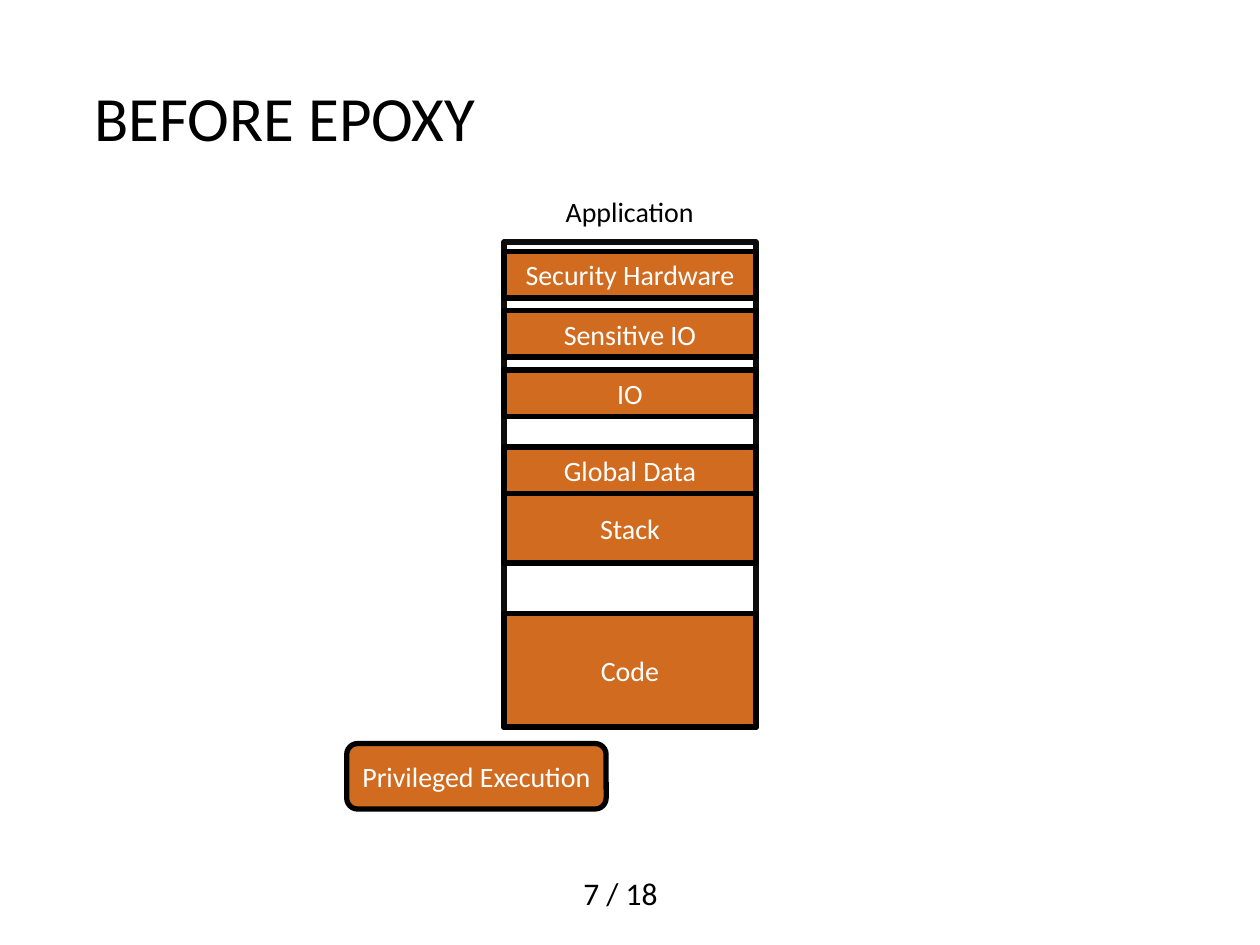
"""Builds the slide that shows an application's memory before EPOXY."""
from pptx import Presentation
from pptx import util as u
from pptx.dml.color import RGBColor
from pptx.enum import shapes, text

COLOURS = {"ink": "000000", "frame": "0D0D0D", "region": "D06B20", "light": "FFFFFF"}
MEMORY_LEFT, MEMORY_WIDTH = 10.16, 5.08
REGIONS = [
    ("Security Hardware", 5.07, 0.94),
    ("Sensitive IO", 6.26, 0.94),
    ("IO", 7.46, 0.94),
    ("Global Data", 9.01, 0.94),
    ("Stack", 9.95, 1.4),
    ("Code", 12.37, 2.29),
]


def colour(name):
    return RGBColor.from_string(COLOURS[name])


def write(holder, wording, size, ink, align, **frame_format):
    frame = holder.text_frame
    for name, value in frame_format.items():
        setattr(frame, name, value)
    paragraph = frame.paragraphs[0]
    paragraph.alignment = align
    run = paragraph.add_run()
    run.text = wording
    for name, value in {"name": "Calibri", "size": u.Pt(size)}.items():
        setattr(run.font, name, value)
    run.font.color.rgb = colour(ink)


def add_label(slide, wording, place, size, align=text.PP_ALIGN.LEFT, **frame_format):
    label = slide.shapes.add_textbox(*map(u.Cm, place))
    write(label, wording, size, "ink", align, **frame_format)


def add_block(slide, place, kind=shapes.MSO_SHAPE.RECTANGLE, wording="",
              fill="region", line="ink"):
    block = slide.shapes.add_shape(kind, *map(u.Cm, place))
    block.shadow.inherit = False
    block.line.color.rgb = colour(line)
    block.line.width = u.Pt(3)
    if fill:
        block.fill.solid()
        block.fill.fore_color.rgb = colour(fill)
    else:
        block.fill.background()
    if wording:
        write(block, wording, 16, "light", text.PP_ALIGN.CENTER,
              word_wrap=True, vertical_anchor=text.MSO_ANCHOR.MIDDLE)


def main():
    deck = Presentation()
    deck.slide_width, deck.slide_height = u.Cm(25.4), u.Cm(19.05)
    slide = deck.slides.add_slide(deck.slide_layouts[6])

    add_label(slide, "7 / 18", (11.51, 17.5, 2.46, 1.02), 18, word_wrap=False)
    add_label(slide, "BEFORE EPOXY", (1.9, 0.76, 21.59, 3.18), 36, word_wrap=True,
              vertical_anchor=text.MSO_ANCHOR.MIDDLE, margin_left=0, margin_right=0)
    add_label(slide, "Application", (9.23, 3.79, 6.93, 0.94), 16,
              text.PP_ALIGN.CENTER, word_wrap=True)

    add_block(slide, (MEMORY_LEFT, 4.88, MEMORY_WIDTH, 9.78), fill=None, line="frame")
    for region, top, height in REGIONS:
        add_block(slide, (MEMORY_LEFT, top, MEMORY_WIDTH, height), wording=region)
    add_block(slide, (6.99, 14.99, 5.23, 1.32), shapes.MSO_SHAPE.ROUNDED_RECTANGLE,
              "Privileged Execution")

    deck.save("out.pptx")


if __name__ == "__main__":
    main()
